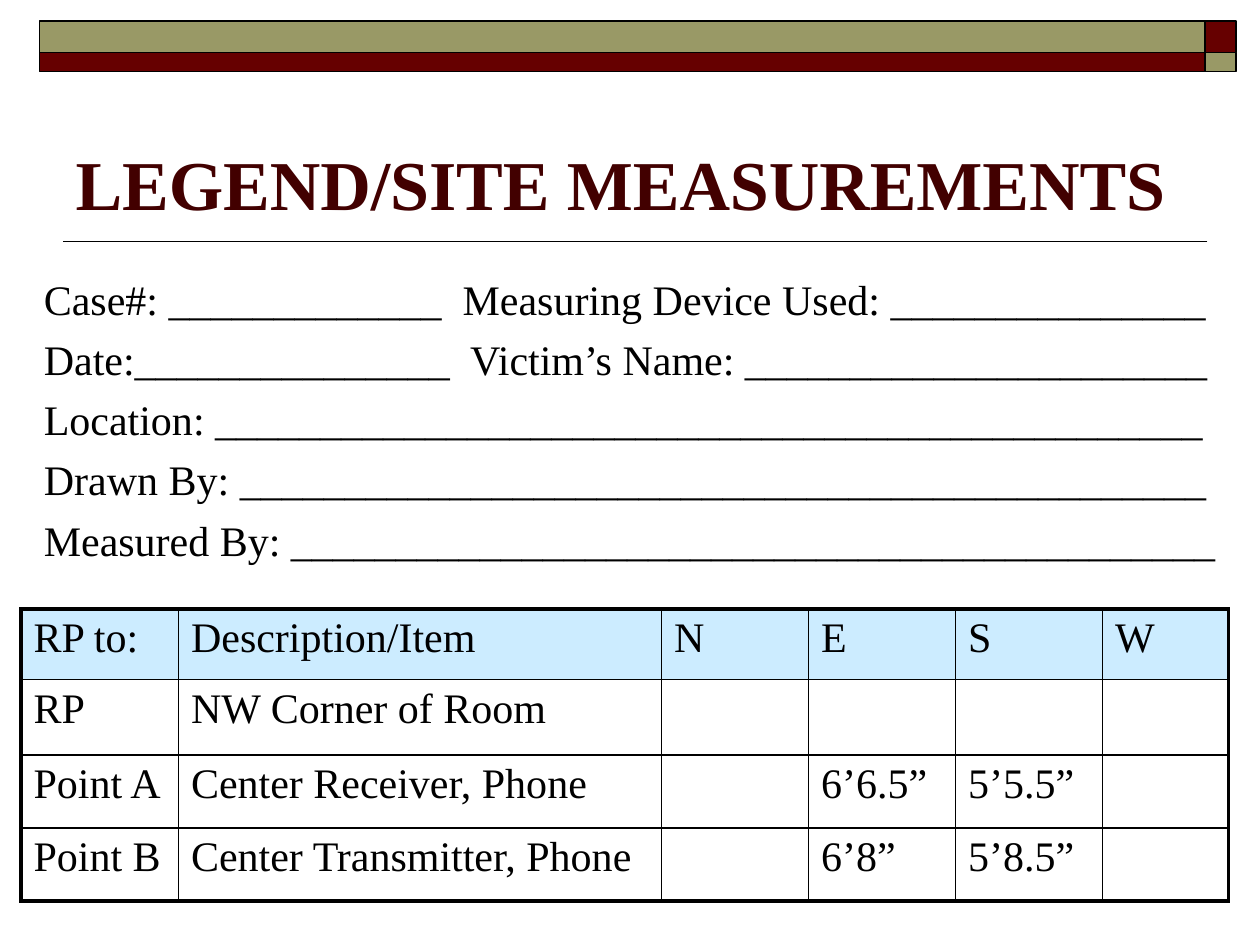
"""Builds the legend and site measurements slide."""
import pptx
import pptx.dml.color
import pptx.enum.shapes
import pptx.enum.text
import pptx.oxml.ns
import pptx.util
from lxml import etree

Pt = pptx.util.Pt
FONT, BLACK, MAROON, OLIVE = "Times New Roman", "000000", "660000", "999966"
TITLE = "LEGEND/SITE MEASUREMENTS"
FORM_LINES = [
    "Case#: _____________  Measuring Device Used: _______________",
    "Date:_______________  Victim’s Name: ______________________",
    "Location: _______________________________________________",
    "Drawn By: ______________________________________________",
    "Measured By: ____________________________________________",
]
ROWS = [
    ("RP to:", "Description/Item", "N", "E", "S", "W"),
    ("RP", "NW Corner of Room", "", "", "", ""),
    ("Point A", "Center Receiver, Phone", "", "6’6.5”", "5’5.5”", ""),
    ("Point B", "Center Transmitter, Phone", "", "6’8”", "5’8.5”", ""),
]
COL_WIDTHS = [90, 276, 84, 84, 84, 72]
ROW_HEIGHTS = [40.25, 43.25, 41.75, 41.75]
BAR_COLS = [(22.5, 666), (688.5, 18)]
BAR_ROWS = [(12, 18, (OLIVE, MAROON)), (30, 11, (MAROON, OLIVE))]


def rgb(value):
    return pptx.dml.color.RGBColor.from_string(value)


def add_run(p, text, size=24, color=BLACK, bold=False):
    r = p.add_run()
    r.text = text
    r.font.name, r.font.size, r.font.bold = FONT, Pt(size), bold
    r.font.color.rgb = rgb(color)


def add_bars(slide):
    for top, height, colors in BAR_ROWS:
        for (left, width), color in zip(BAR_COLS, colors):
            sp = slide.shapes.add_shape(
                pptx.enum.shapes.MSO_SHAPE.RECTANGLE,
                Pt(left), Pt(top), Pt(width), Pt(height))
            sp.shadow.inherit = False
            sp.fill.solid()
            sp.fill.fore_color.rgb = rgb(color)
            sp.line.color.rgb = rgb(BLACK)
            sp.line.width = Pt(1)


def add_rule(slide):
    line = slide.shapes.add_connector(
        pptx.enum.shapes.MSO_CONNECTOR.STRAIGHT, Pt(690), Pt(138), Pt(36), Pt(138))
    line.line.color.rgb = rgb(BLACK)
    line.line.width = Pt(1)
    etree.SubElement(line._element.spPr, pptx.oxml.ns.qn("a:effectLst"))


def add_title(slide):
    sp = slide.shapes.title
    sp.left, sp.top, sp.width, sp.height = Pt(36), Pt(42), Pt(648), Pt(90)
    tf = sp.text_frame
    tf.vertical_anchor = pptx.enum.text.MSO_ANCHOR.BOTTOM
    p = tf.paragraphs[0]
    p.alignment = pptx.enum.text.PP_ALIGN.LEFT
    add_run(p, TITLE, 40, "420000", True)


def add_form(slide):
    tf = slide.shapes.add_textbox(Pt(18), Pt(156), Pt(684), Pt(173)).text_frame
    tf.word_wrap = True
    tf.margin_top = Pt(6.8)
    for i, text in enumerate(FORM_LINES):
        p = tf.add_paragraph() if i else tf.paragraphs[0]
        p.line_spacing = 0.75
        p.space_before = Pt(12.8 if i else 0)
        add_run(p, text)


def set_border(cell, side, width):
    ln = etree.SubElement(cell._tc.get_or_add_tcPr(), pptx.oxml.ns.qn("a:ln" + side),
                          w=str(int(Pt(width))))
    fill = etree.SubElement(ln, pptx.oxml.ns.qn("a:solidFill"))
    etree.SubElement(fill, pptx.oxml.ns.qn("a:srgbClr"), val=BLACK)


def add_measurements(slide):
    last_row, last_col = len(ROWS) - 1, len(COL_WIDTHS) - 1
    table = slide.shapes.add_table(
        len(ROWS), len(COL_WIDTHS), Pt(12), Pt(348),
        Pt(sum(COL_WIDTHS)), Pt(sum(ROW_HEIGHTS))).table
    table.first_row = table.horz_banding = False
    for col, width in zip(table.columns, COL_WIDTHS):
        col.width = Pt(width)
    for i, (row, height) in enumerate(zip(ROWS, ROW_HEIGHTS)):
        table.rows[i].height = Pt(height)
        for j, text in enumerate(row):
            cell = table.cell(i, j)
            outer = {"L": j == 0, "R": j == last_col, "T": i == 0, "B": i == last_row}
            for side, is_outer in outer.items():
                set_border(cell, side, 2.25 if is_outer else 1)
            if i == 0:
                cell.fill.solid()
                cell.fill.fore_color.rgb = rgb("CCECFF")
            else:
                cell.fill.background()
            if text:
                add_run(cell.text_frame.paragraphs[0], text)


def main():
    prs = pptx.Presentation()
    prs.slide_width, prs.slide_height = Pt(720), Pt(540)
    slide = prs.slides.add_slide(prs.slide_layouts[5])
    add_rule(slide)
    add_bars(slide)
    add_title(slide)
    add_measurements(slide)
    add_form(slide)
    prs.save("out.pptx")


if __name__ == "__main__":
    main()
